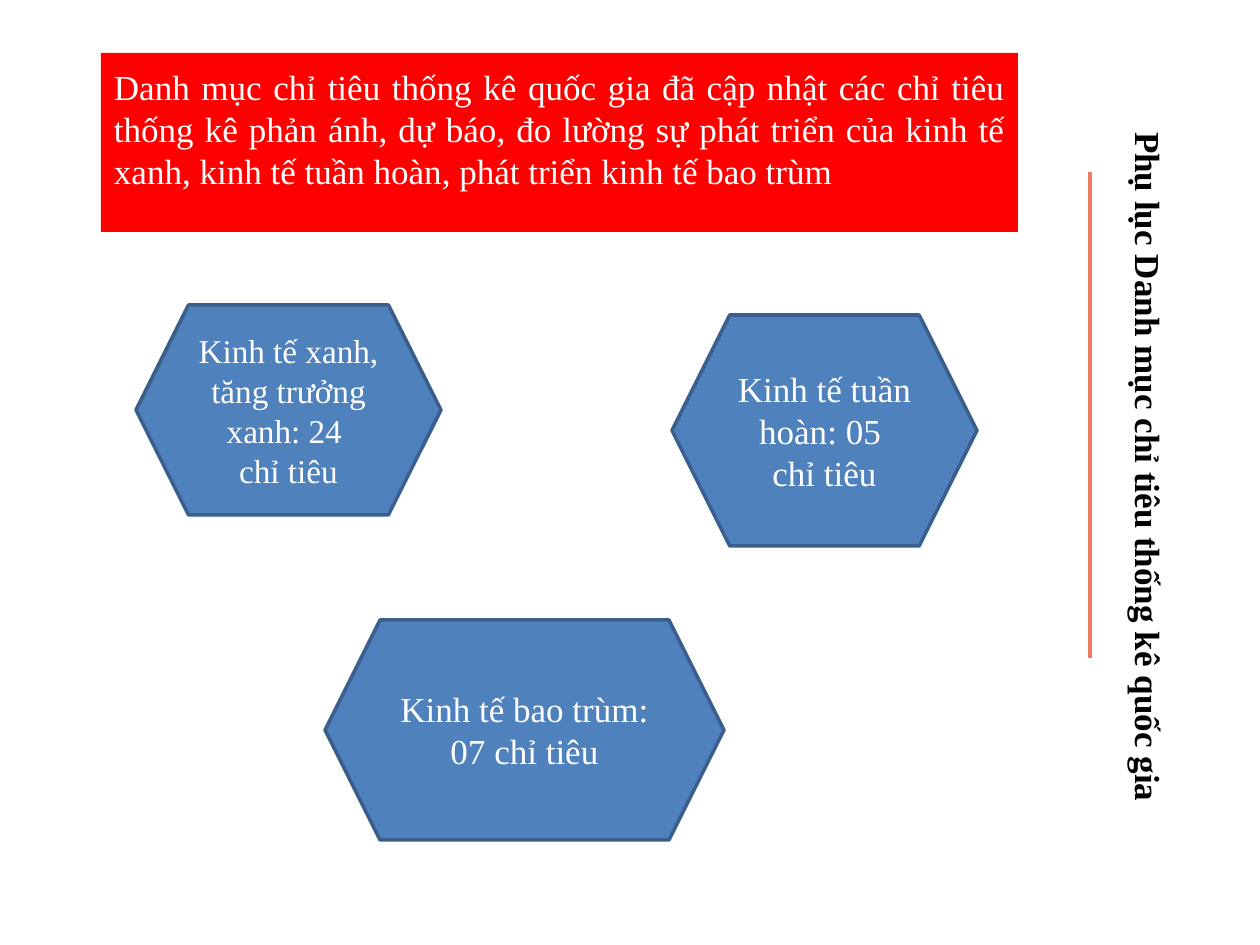
from pptx import Presentation
from pptx.dml.color import RGBColor
from pptx.enum.shapes import MSO_CONNECTOR, MSO_SHAPE
from pptx.enum.text import MSO_ANCHOR, PP_ALIGN
from pptx.oxml.ns import qn
from pptx.util import Pt
from lxml.etree import SubElement

EMU_PER_PX = 914400 / 126


def px(length):
    return round(length * EMU_PER_PX)


def color(value):
    return RGBColor.from_string(value)


class SlideBuilder:
    FONT = "Times New Roman"
    WHITE, BLACK = "FFFFFF", "000000"
    RED, ORANGE = "FF0000", "EE795B"
    BLUE, NAVY = "4F81BD", "3A5F8C"

    def __init__(self, slide):
        self.slide = slide

    def set_text(self, shape, text, size, ink, align, anchor, inset, bold=False):
        frame = shape.text_frame
        margins = {f"margin_{side}": px(inset) for side in ("left", "right", "top", "bottom")}
        for name, value in {"word_wrap": True, "vertical_anchor": anchor, **margins}.items():
            setattr(frame, name, value)
        para = frame.paragraphs[0]
        para.text = text
        para.alignment = align
        for span in para.runs:
            for name, value in {"name": self.FONT, "size": Pt(size), "bold": bold}.items():
                setattr(span.font, name, value)
            span.font.color.rgb = color(ink)

    def block(self, kind, place, fill, outline=None):
        shape = self.slide.shapes.add_shape(kind, *map(px, place))
        shape.shadow.inherit = False
        shape.fill.solid()
        shape.fill.fore_color.rgb = color(fill)
        if outline:
            shape.line.color.rgb = color(outline)
            shape.line.width = Pt(2)
        else:
            shape.line.fill.background()
        return shape

    def banner(self, place, text):
        shape = self.block(MSO_SHAPE.RECTANGLE, place, self.RED)
        self.set_text(shape, text, 20, self.WHITE, PP_ALIGN.JUSTIFY, MSO_ANCHOR.TOP, 13)

    def hexagon(self, place, text, size):
        shape = self.block(MSO_SHAPE.HEXAGON, place, self.BLUE, self.NAVY)
        self.set_text(shape, text, size, self.WHITE, PP_ALIGN.CENTER, MSO_ANCHOR.MIDDLE, 6)

    def side_title(self, place, text):
        box = self.slide.shapes.add_textbox(*map(px, place))
        box.rotation = 90
        self.set_text(box, text, 20, self.BLACK, PP_ALIGN.LEFT, MSO_ANCHOR.TOP, 13, bold=True)

    def rule(self, x, top, bottom):
        line = self.slide.shapes.add_connector(
            MSO_CONNECTOR.STRAIGHT, px(x), px(top), px(x), px(bottom))
        line.line.color.rgb = color(self.ORANGE)
        line.line.width = Pt(2.25)
        SubElement(line._element.spPr, qn("a:effectLst"))


def main():
    deck = Presentation()
    deck.slide_width, deck.slide_height = px(1260), px(945)
    page = SlideBuilder(deck.slides.add_slide(deck.slide_layouts[6]))

    # Banner across the top
    page.banner((101, 53, 917, 179),
                "Danh mục chỉ tiêu thống kê quốc gia đã cập nhật các chỉ tiêu thống kê "
                "phản ánh, dự báo, đo lường sự phát triển của kinh tế xanh, kinh tế "
                "tuần hoàn, phát triển kinh tế bao trùm")

    # Vertical title and its rule
    page.side_title((782, 426, 708, 94), "Phụ lục Danh mục chỉ tiêu thống kê quốc gia")
    page.rule(1090, 172, 658)

    # Indicator groups
    for place, text, size in (
        ((136, 305, 305, 210), "Kinh tế xanh, tăng trưởng xanh: 24 \vchỉ tiêu", 19),
        ((672, 315, 305, 231), "Kinh tế tuần hoàn: 05 \vchỉ tiêu", 20),
        ((325, 620, 399, 220), "Kinh tế bao trùm: 07 chỉ tiêu", 20),
    ):
        page.hexagon(place, text, size)

    deck.save("out.pptx")


if __name__ == "__main__":
    main()
